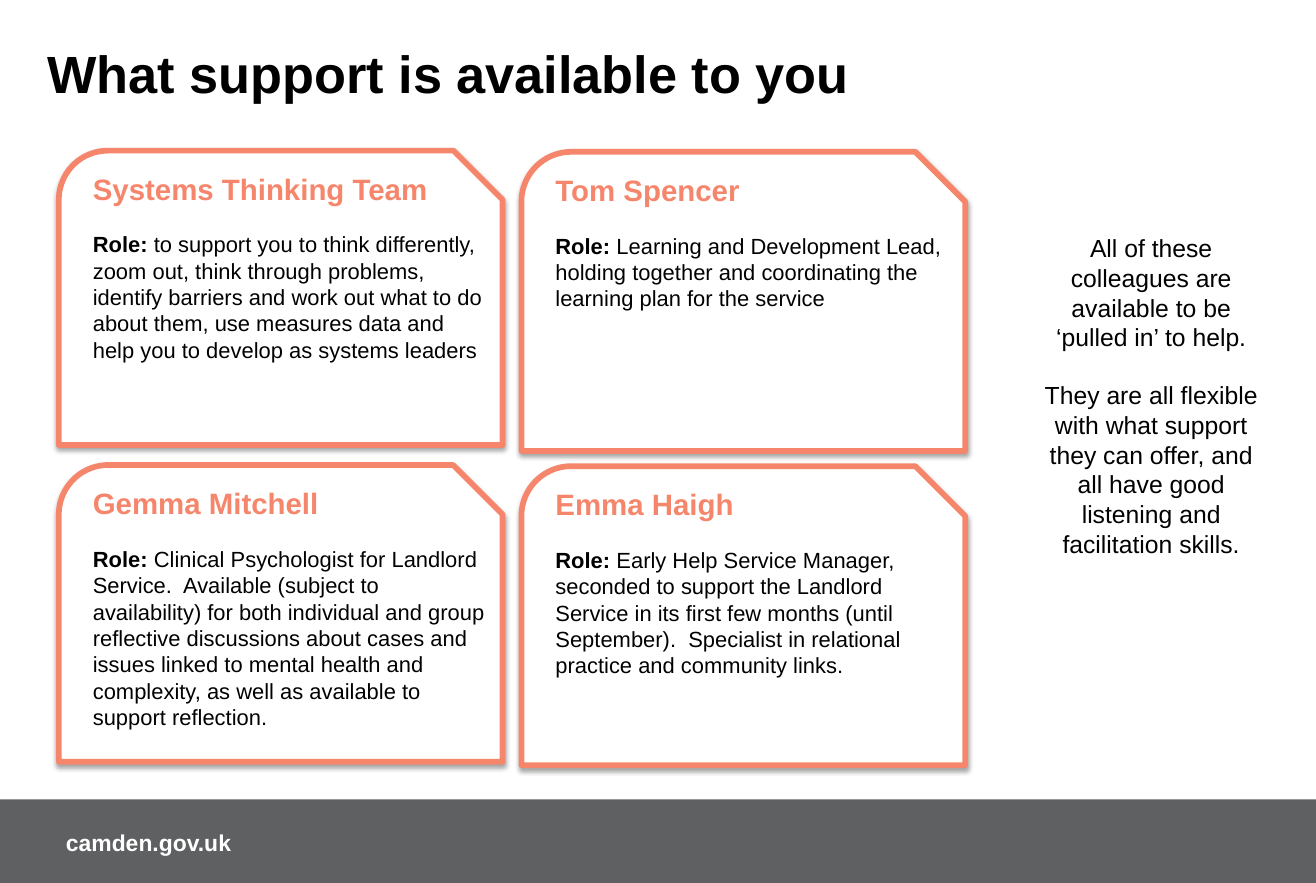
import lxml.etree
import pptx
import pptx.dml.color
import pptx.enum.shapes
import pptx.enum.text
import pptx.oxml.ns
import pptx.util

Inches = pptx.util.Inches
Pt = pptx.util.Pt
Align = pptx.enum.text.PP_ALIGN
Shape = pptx.enum.shapes.MSO_SHAPE

CORAL, BLACK, WHITE, GREY = "F5866C", "000000", "FFFFFF", "5F6062"

CARDS = [
    (0.5, 1.28, 2.5, "Systems Thinking Team",
     "to support you to think differently, zoom out, think through problems, "
     "identify barriers and work out what to do about them, use measures data "
     "and help you to develop as systems leaders"),
    (4.43, 1.29, 2.54, "Tom Spencer",
     "Learning and Development Lead, holding together and coordinating the "
     "learning plan for the service"),
    (0.5, 3.95, 2.52, "Gemma Mitchell",
     "Clinical Psychologist for Landlord Service.  Available (subject to "
     "availability) for both individual and group reflective discussions about "
     "cases and issues linked to mental health and complexity, as well as "
     "available to support reflection."),
    (4.43, 3.96, 2.54, "Emma Haigh",
     "Early Help Service Manager, seconded to support the Landlord Service in "
     "its first few months (until September).  Specialist in relational "
     "practice and community links."),
]

ASIDE = [
    "All of these colleagues are available to be ‘pulled in’ to help.",
    "They are all flexible with what support they can offer, and all have good "
    "listening and facilitation skills.",
]


def color(code):
    return pptx.dml.color.RGBColor.from_string(code)


class Deck:
    font = "Arial"

    def __init__(self, width, height):
        self.file = pptx.Presentation()
        self.file.slide_width = Inches(width)
        self.file.slide_height = Inches(height)
        self.slide = self.file.slides.add_slide(self.file.slide_layouts[5])

    def run(self, para, text, size, tint=BLACK, bold=False):
        run = para.add_run()
        run.text = text
        run.font.name = self.font
        run.font.size = Pt(size)
        run.font.bold = bold
        run.font.color.rgb = color(tint)

    def title(self, text, left, top, width, height):
        box = self.slide.shapes.title
        box.left, box.top = Inches(left), Inches(top)
        box.width, box.height = Inches(width), Inches(height)
        frame = box.text_frame
        frame.vertical_anchor = pptx.enum.text.MSO_ANCHOR.TOP
        frame.paragraphs[0].alignment = Align.LEFT
        self.run(frame.paragraphs[0], text, 32, bold=True)

    def shape(self, kind, left, top, width, height, fill):
        shape = self.slide.shapes.add_shape(
            kind, Inches(left), Inches(top), Inches(width), Inches(height))
        shape.shadow.inherit = False
        shape.fill.solid()
        shape.fill.fore_color.rgb = color(fill)
        shape.line.fill.background()
        return shape

    def shade(self, shape):
        qn = pptx.oxml.ns.qn
        glow = lxml.etree.SubElement(
            shape._element.spPr.find(qn("a:effectLst")), qn("a:outerShdw"),
            blurRad=str(Pt(3.1)), dist=str(Pt(1.8)), dir="5400000",
            rotWithShape="0")
        tint = lxml.etree.SubElement(glow, qn("a:srgbClr"), val=BLACK)
        lxml.etree.SubElement(tint, qn("a:alpha"), val="35000")

    def text(self, left, top, width, height, paras, gap=0, align=Align.LEFT):
        box = self.slide.shapes.add_textbox(
            Inches(left), Inches(top), Inches(width), Inches(height))
        frame = box.text_frame
        frame.word_wrap = True
        for index, runs in enumerate(paras):
            para = frame.add_paragraph() if index else frame.paragraphs[0]
            para.alignment = align
            if index:
                para.space_before = Pt(gap)
            for run in runs:
                self.run(para, *run)
        return frame

    def card(self, left, top, height, name, role):
        shape = self.shape(
            Shape.SNIP_ROUND_RECTANGLE, left, top, 3.77, height, WHITE)
        shape.line.color.rgb = color(CORAL)
        shape.line.width = Pt(3.5)
        self.shade(shape)
        self.text(left + 0.19, top + 0.12, 3.58, height - 0.2, [
            [(name, 18, CORAL, True)],
            [("Role: ", 13.4, BLACK, True), (role, 13.4)],
        ], gap=15.4)

    def footer(self, text):
        self.shape(Shape.RECTANGLE, 0, 6.79, 11.18, 0.71, GREY)
        frame = self.text(0.56, 7.04, 4.61, 0.24, [[(text, 14, WHITE, True)]])
        frame.margin_left = frame.margin_top = frame.margin_bottom = 0


def main():
    deck = Deck(11.18, 7.5)
    deck.footer("camden.gov.uk")
    deck.title("What support is available to you", 0.3, 0.3, 8.11, 0.64)
    for card in CARDS:
        deck.card(*card)
    deck.text(8.75, 1.93, 2.06, 2.89, [[(line, 15.1)] for line in ASIDE],
              gap=17.4, align=Align.CENTER)
    deck.file.save("out.pptx")


if __name__ == "__main__":
    main()
